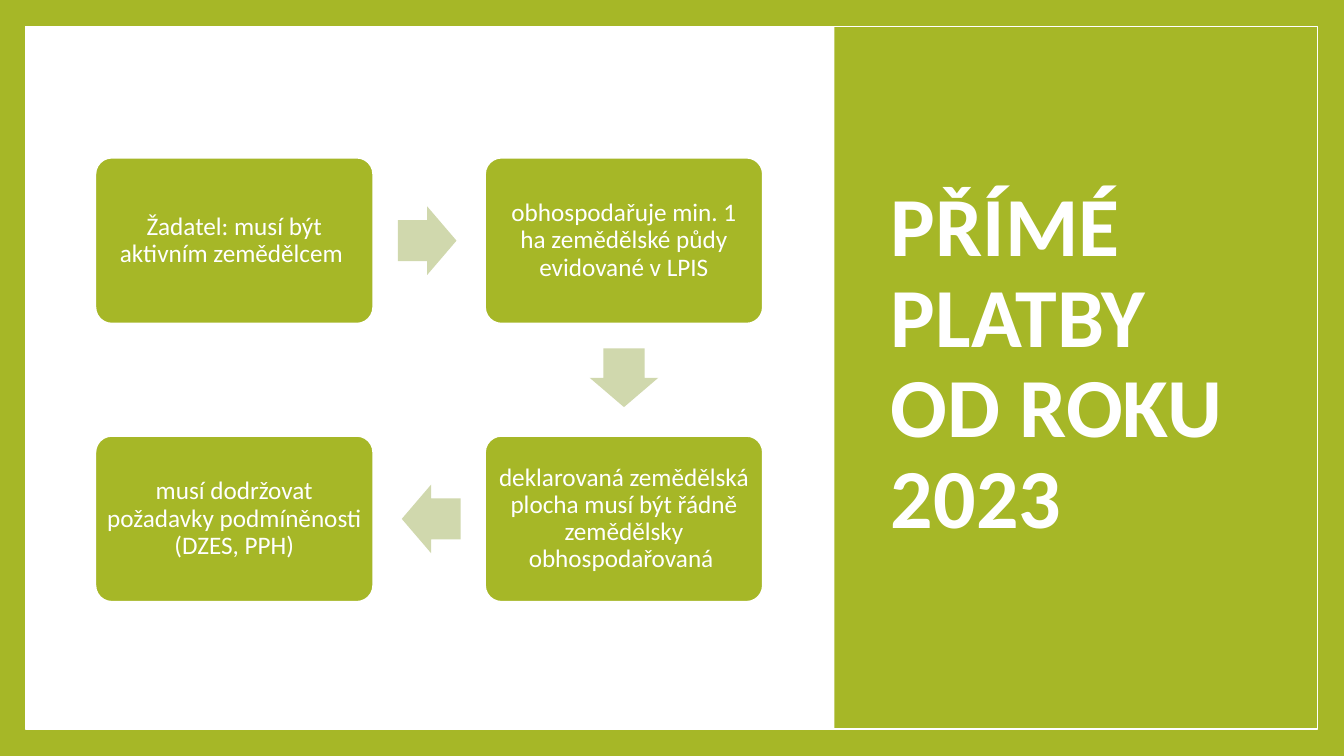
import pptx
import pptx.util
import pptx.dml.color
import pptx.enum.shapes
import pptx.enum.text
from dataclasses import dataclass

Cm = pptx.util.Cm
Shape = pptx.enum.shapes.MSO_SHAPE

# Content: steps in reading order with their (column, row) in the grid
TITLE = "PŘÍMÉ PLATBY OD ROKU 2023"
STEPS = [
    ("Žadatel: musí být aktivním zemědělcem ", (0, 0)),
    ("obhospodařuje min. 1 ha zemědělské půdy evidované v LPIS", (1, 0)),
    ("deklarovaná zemědělská plocha musí být řádně zemědělsky obhospodařovaná ", (1, 1)),
    ("musí dodržovat požadavky podmíněnosti (DZES, PPH)", (0, 1)),
]


@dataclass(frozen=True)
class Theme:
    green: str = "A6B727"
    pale: str = "D0D8AD"
    white: str = "FFFFFF"
    font: str = "Calibri"
    title_size: int = 60
    step_size: int = 18


THEME = Theme()

# Geometry in centimetres
SLIDE_W, SLIDE_H = 33.87, 19.05
FRAME = (0.64, 0.67, 32.56, 17.7)
PANEL_LEFT = 21.03
TITLE_AREA = (22.2, 1.7, 9.93, 15.01)
GRID_LEFT, GRID_TOP = 2.4, 3.97
STEP_W, STEP_H = 7.01, 4.19
COLUMN_PITCH, ROW_PITCH = 9.82, 7.01
ARROW_W, ARROW_H = 1.48, 1.73
ARROW_SETBACK = 0.05
STEP_INSET = 0.17


def rgb(value):
    return pptx.dml.color.RGBColor.from_string(value)


def add_block(page, kind, area, fill=None, line=None, line_width=1):
    block = page.shapes.add_shape(kind, *map(Cm, area))
    block.shadow.inherit = False
    if fill:
        block.fill.solid()
        block.fill.fore_color.rgb = rgb(fill)
    else:
        block.fill.background()
    if line:
        block.line.color.rgb = rgb(line)
        block.line.width = pptx.util.Pt(line_width)
    else:
        block.line.fill.background()
    return block


def write(shape, text, size, align, bold=False):
    frame = shape.text_frame
    frame.word_wrap = True
    frame.auto_size = pptx.enum.text.MSO_AUTO_SIZE.NONE
    frame.vertical_anchor = pptx.enum.text.MSO_ANCHOR.MIDDLE
    frame.text = text
    para = frame.paragraphs[0]
    para.alignment = align
    para.line_spacing = 0.9
    para.font.name = THEME.font
    para.font.size = pptx.util.Pt(size)
    para.font.bold = bold
    para.font.color.rgb = rgb(THEME.white)


def step_centre(cell):
    column, row = cell
    return (GRID_LEFT + column * COLUMN_PITCH + STEP_W / 2,
            GRID_TOP + row * ROW_PITCH + STEP_H / 2)


def add_step(page, text, cell):
    x, y = step_centre(cell)
    box = add_block(page, Shape.ROUNDED_RECTANGLE,
                    (x - STEP_W / 2, y - STEP_H / 2, STEP_W, STEP_H),
                    THEME.green, THEME.white, 1.5)
    box.adjustments[0] = 0.1
    frame = box.text_frame
    frame.margin_left = frame.margin_right = Cm(STEP_INSET)
    frame.margin_top = frame.margin_bottom = Cm(STEP_INSET)
    write(box, text, THEME.step_size, pptx.enum.text.PP_ALIGN.CENTER)


def add_arrow(page, start, end):
    across, down = end[0] - start[0], end[1] - start[1]
    (x1, y1), (x2, y2) = step_centre(start), step_centre(end)
    x = (x1 + x2) / 2 - across * ARROW_SETBACK
    y = (y1 + y2) / 2 - down * ARROW_SETBACK
    arrow = add_block(page, Shape.RIGHT_ARROW,
                      (x - ARROW_W / 2, y - ARROW_H / 2, ARROW_W, ARROW_H), THEME.pale)
    arrow.adjustments[0] = 0.6
    arrow.adjustments[1] = 0.5
    arrow.rotation = {(1, 0): 0, (0, 1): 90, (-1, 0): 180}[across, down]


def main():
    deck = pptx.Presentation()
    deck.slide_width, deck.slide_height = Cm(SLIDE_W), Cm(SLIDE_H)
    page = deck.slides.add_slide(deck.slide_layouts[5])

    # Background areas
    add_block(page, Shape.RECTANGLE, (0, 0, SLIDE_W, SLIDE_H), THEME.green)
    add_block(page, Shape.RECTANGLE, FRAME, THEME.white)
    add_block(page, Shape.RECTANGLE,
              (PANEL_LEFT, 0, SLIDE_W - PANEL_LEFT, SLIDE_H), THEME.green)

    # Title, brought in front of the panel
    title = page.shapes.title
    title.left, title.top, title.width, title.height = map(Cm, TITLE_AREA)
    write(title, TITLE, THEME.title_size, pptx.enum.text.PP_ALIGN.LEFT, bold=True)
    page.shapes.element.append(title.element)

    # Thin frame
    add_block(page, Shape.RECTANGLE, FRAME, line=THEME.white)

    # Steps and the arrows between them
    for text, cell in STEPS:
        add_step(page, text, cell)
    for (_, start), (_, end) in zip(STEPS, STEPS[1:]):
        add_arrow(page, start, end)

    deck.save("out.pptx")


if __name__ == "__main__":
    main()
